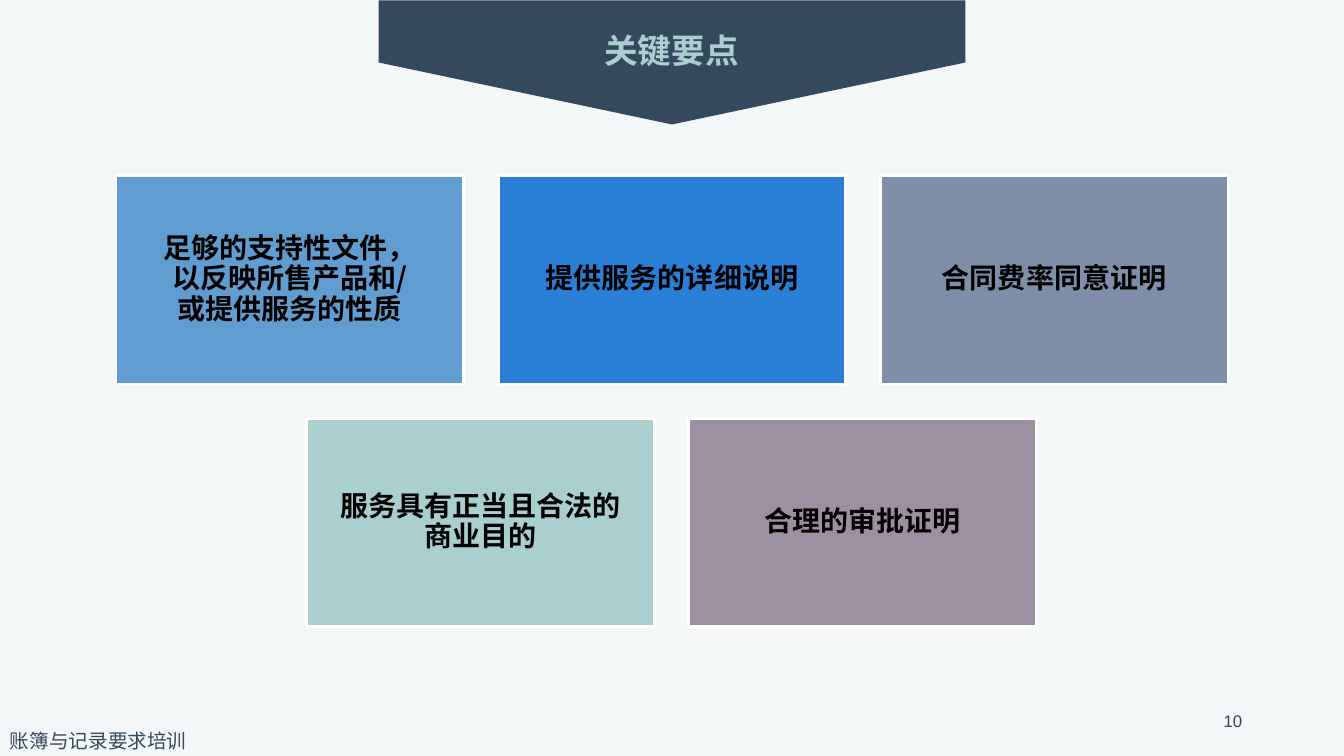
from dataclasses import dataclass

import pptx
import pptx.dml.color
import pptx.enum.shapes
import pptx.enum.text
import pptx.oxml.ns
import pptx.util
from lxml import etree

PX = 9144
SLIDE_W, SLIDE_H = 1333, 750
CARD_W, CARD_H = 345, 207
GAP = 34
CARDS_TOP = 174
CJK = "Noto Sans CJK SC"
COLORS = {
    "background": "F4F7F7",
    "navy": "34495E",
    "title": "AACFD0",
    "black": "000000",
    "white": "FFFFFF",
    "sky": "629DD1",
    "blue": "297FD5",
    "slate": "7F8FA9",
    "mint": "AACFCF",
    "mauve": "9D90A0",
}
ALIGN = pptx.enum.text.PP_ALIGN
ANCHOR = pptx.enum.text.MSO_ANCHOR
SHAPE = pptx.enum.shapes.MSO_SHAPE


@dataclass(frozen=True)
class Style:
    size: int
    color: str
    bold: bool = False
    font: str = CJK
    align: ALIGN = ALIGN.CENTER
    anchor: ANCHOR = ANCHOR.TOP
    inset_x: int = 10
    inset_y: int = 5
    spacing: float = 1.0


@dataclass(frozen=True)
class Label:
    text: str
    x: int
    y: int
    w: int
    h: int
    style: Style


@dataclass(frozen=True)
class Card:
    text: str
    fill: str


CARD_STYLE = Style(20, "black", bold=True, anchor=ANCHOR.MIDDLE,
                   inset_x=8, inset_y=8, spacing=0.9)
LABELS = [
    Label("账簿与记录要求培训", 0, 718, 417, 34, Style(14, "navy", align=ALIGN.LEFT)),
    Label("关键要点", 297, 25, 738, 50, Style(24, "title", bold=True)),
    Label("10", 942, 695, 300, 40,
          Style(12, "navy", font="Arial", align=ALIGN.RIGHT, anchor=ANCHOR.MIDDLE)),
]
CARD_ROWS = [
    [
        Card("足够的支持性文件，\n以反映所售产品和/\n或提供服务的性质", "sky"),
        Card("提供服务的详细说明", "blue"),
        Card("合同费率同意证明", "slate"),
    ],
    [
        Card("服务具有正当且合法的\n商业目的", "mint"),
        Card("合理的审批证明", "mauve"),
    ],
]


def px(n: int) -> pptx.util.Emu:
    return pptx.util.Emu(n * PX)


def rgb(name: str) -> pptx.dml.color.RGBColor:
    return pptx.dml.color.RGBColor.from_string(COLORS[name])


def write(sp, text: str, style: Style) -> None:
    tf = sp.text_frame
    tf.word_wrap = True
    tf.vertical_anchor = style.anchor
    tf.margin_left = tf.margin_right = px(style.inset_x)
    tf.margin_top = tf.margin_bottom = px(style.inset_y)
    p = tf.paragraphs[0]
    p.text = text
    p.alignment = style.align
    p.line_spacing = style.spacing
    for r in p.runs:
        r.font.size = pptx.util.Pt(style.size)
        r.font.bold = style.bold
        r.font.name = style.font
        r.font.color.rgb = rgb(style.color)
        ea = etree.SubElement(r.font._element, pptx.oxml.ns.qn("a:ea"))
        ea.set("typeface", style.font)


def add_shape(s, kind: SHAPE, x: int, y: int, w: int, h: int, fill: str):
    sp = s.shapes.add_shape(kind, px(x), px(y), px(w), px(h))
    sp.shadow.inherit = False
    sp.fill.solid()
    sp.fill.fore_color.rgb = rgb(fill)
    sp.line.fill.background()
    return sp


def add_label(s, label: Label) -> None:
    sp = s.shapes.add_textbox(px(label.x), px(label.y), px(label.w), px(label.h))
    write(sp, label.text, label.style)


def add_card(s, card: Card, x: int, y: int) -> None:
    sp = add_shape(s, SHAPE.RECTANGLE, x, y, CARD_W, CARD_H, card.fill)
    sp.line.color.rgb = rgb("white")
    sp.line.width = pptx.util.Pt(2)
    write(sp, card.text, CARD_STYLE)


def main() -> None:
    prs = pptx.Presentation()
    prs.slide_width, prs.slide_height = px(SLIDE_W), px(SLIDE_H)
    s = prs.slides.add_slide(prs.slide_layouts[6])
    s.background.fill.solid()
    s.background.fill.fore_color.rgb = rgb("background")

    banner = add_shape(s, SHAPE.PENTAGON, 605, -229, 123, 582, "navy")
    banner.rotation = 90
    banner.adjustments[0] = 0.5
    for label in LABELS:
        add_label(s, label)

    for row, cards in enumerate(CARD_ROWS):
        row_w = len(cards) * (CARD_W + GAP) - GAP
        left = (SLIDE_W - row_w) // 2
        for col, card in enumerate(cards):
            add_card(s, card, left + col * (CARD_W + GAP),
                     CARDS_TOP + row * (CARD_H + GAP))

    prs.save("out.pptx")


if __name__ == "__main__":
    main()
